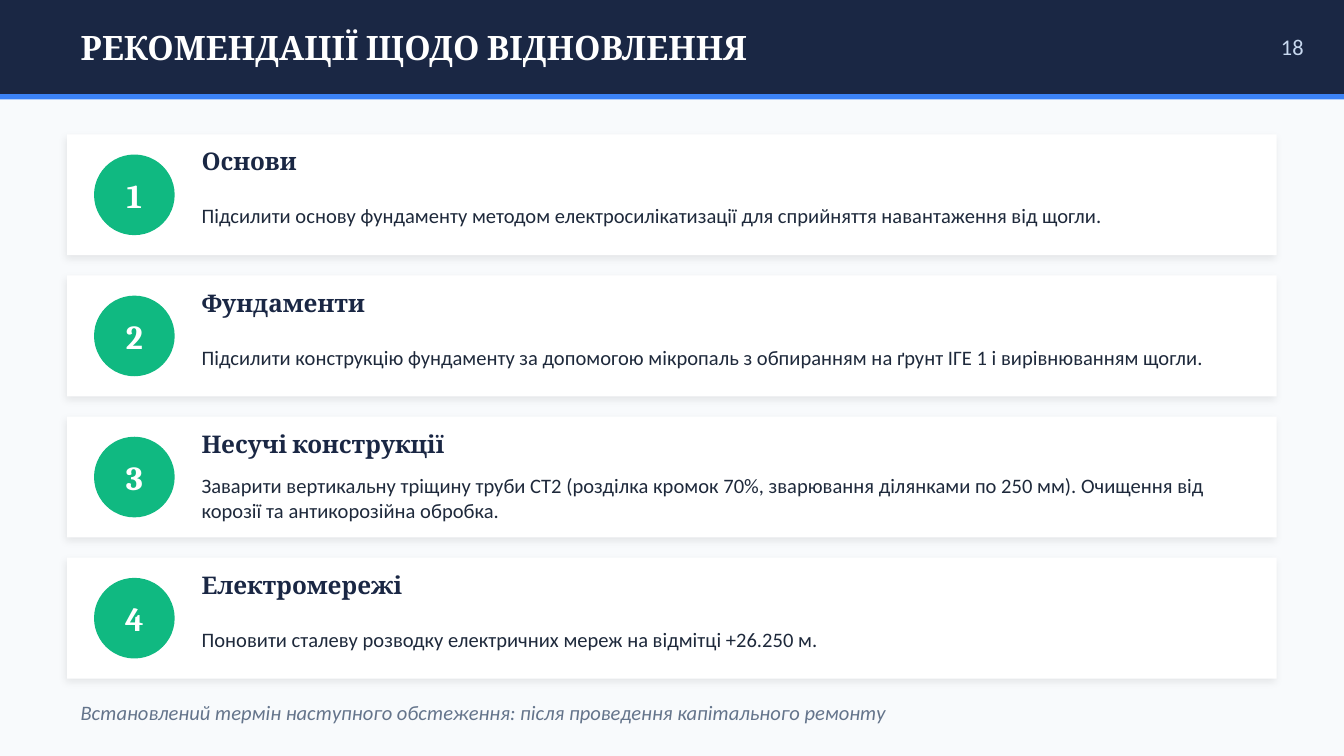
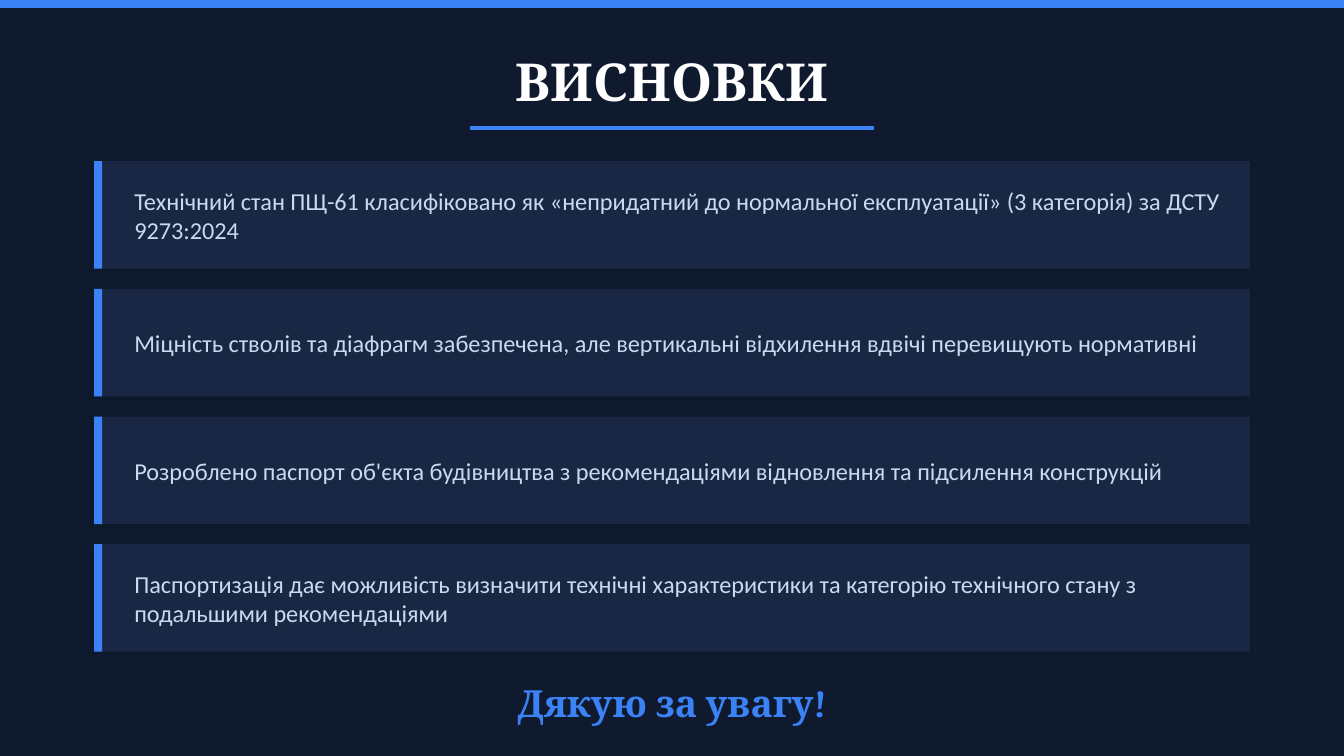
from lxml.etree import SubElement
from pptx import Presentation
from pptx.dml.color import RGBColor
from pptx.enum.shapes import MSO_CONNECTOR as Connector, MSO_SHAPE as Shape
from pptx.enum.text import MSO_ANCHOR as Anchor, PP_ALIGN as Align
from pptx.oxml.ns import qn
from pptx.util import Pt

# Palette and fonts
WHITE = RGBColor(0xFF, 0xFF, 0xFF)
PAPER = RGBColor(0xF8, 0xFA, 0xFC)
NIGHT = RGBColor(0x0F, 0x1A, 0x2E)
NAVY = RGBColor(0x1A, 0x27, 0x44)
BLUE = RGBColor(0x3B, 0x82, 0xF6)
GREEN = RGBColor(0x10, 0xB9, 0x81)
INK = RGBColor(0x1E, 0x29, 0x3B)
SLATE = RGBColor(0x64, 0x74, 0x8B)
ICE = RGBColor(0xC8, 0xD9, 0xF0)
SERIF = "Cambria"
SANS = "Calibri"

# Page and card spacing, in points
PAGE_WIDTH, PAGE_HEIGHT = 720, 405
CARD_GAP = 10.8

RECOMMENDATIONS = [
    ("Основи",
     "Підсилити основу фундаменту методом електросилікатизації для сприйняття "
     "навантаження від щогли."),
    ("Фундаменти",
     "Підсилити конструкцію фундаменту за допомогою мікропаль з обпиранням "
     "на ґрунт ІГЕ 1 і вирівнюванням щогли."),
    ("Несучі конструкції",
     "Заварити вертикальну тріщину труби СТ2 (розділка кромок 70%, зварювання "
     "ділянками по 250 мм). Очищення від корозії та антикорозійна обробка."),
    ("Електромережі",
     "Поновити сталеву розводку електричних мереж на відмітці +26.250 м."),
]

CONCLUSIONS = [
    "Технічний стан ПЩ-61 класифіковано як «непридатний до нормальної "
    "експлуатації» (3 категорія) за ДСТУ 9273:2024",
    "Міцність стволів та діафрагм забезпечена, але вертикальні відхилення "
    "вдвічі перевищують нормативні",
    "Розроблено паспорт об'єкта будівництва з рекомендаціями відновлення "
    "та підсилення конструкцій",
    "Паспортизація дає можливість визначити технічні характеристики та "
    "категорію технічного стану з подальшими рекомендаціями",
]


# Building blocks
def add_page(deck, background):
    page = deck.slides.add_slide(deck.slide_layouts[6])
    page.background.fill.solid()
    page.background.fill.fore_color.rgb = background
    return page


def write(shape, text, size, color, font=SANS, bold=False, italic=False,
          align=Align.LEFT):
    frame = shape.text_frame
    frame.word_wrap = True
    frame.vertical_anchor = Anchor.MIDDLE
    frame.margin_left = frame.margin_right = 0
    frame.margin_top = frame.margin_bottom = 0
    para = frame.paragraphs[0]
    para.text = text
    para.alignment = align
    para.font.name = font
    para.font.size = Pt(size)
    para.font.bold = bold
    para.font.italic = italic
    para.font.color.rgb = color


def add_text(page, left, top, width, height, text, size, color, **style):
    box = page.shapes.add_textbox(Pt(left), Pt(top), Pt(width), Pt(height))
    write(box, text, size, color, **style)


def add_block(page, left, top, width, height, fill, kind=Shape.RECTANGLE):
    block = page.shapes.add_shape(kind, Pt(left), Pt(top), Pt(width), Pt(height))
    block.shadow.inherit = False
    block.fill.solid()
    block.fill.fore_color.rgb = fill
    block.line.fill.background()
    return block


def add_card(page, left, top, width, height, fill):
    card = add_block(page, left, top, width, height, fill)
    effects = card._element.spPr.find(qn("a:effectLst"))
    shadow = SubElement(effects, qn("a:outerShdw"), blurRad=str(Pt(4)),
                        dist=str(Pt(2)), dir=str(135 * 60000),
                        algn="bl", rotWithShape="0")
    black = SubElement(shadow, qn("a:srgbClr"), val="000000")
    SubElement(black, qn("a:alpha"), val="8000")


def add_rule(page, left, right, y):
    rule = page.shapes.add_connector(Connector.STRAIGHT,
                                     Pt(left), Pt(y), Pt(right), Pt(y))
    rule.line.color.rgb = BLUE
    rule.line.width = Pt(2)
    SubElement(rule._element.spPr, qn("a:effectLst"))


def add_header(page, title, number):
    add_block(page, 0, 0, PAGE_WIDTH, 50.4, NAVY)
    add_text(page, 43.2, 7.2, 612, 36, title, 18, WHITE, font=SERIF, bold=True)
    add_text(page, 662.4, 7.2, 36, 36, number, 12, ICE, align=Align.RIGHT)
    add_block(page, 0, 50.4, PAGE_WIDTH, 2.88, BLUE)


def add_recommendation(page, top, number, heading, advice):
    add_card(page, 36, top, 648, 64.8, WHITE)
    badge = add_block(page, 50.4, top + 10.8, 43.2, 43.2, GREEN, Shape.OVAL)
    write(badge, str(number), 18, WHITE, font=SERIF, bold=True,
          align=Align.CENTER)
    add_text(page, 108, top + 3.6, 561.6, 21.6, heading, 13, NAVY,
             font=SERIF, bold=True)
    add_text(page, 108, top + 27.36, 561.6, 32.4, advice, 11, INK)


def add_conclusion(page, top, text):
    height = 57.6
    add_card(page, 50.4, top, 619.2, height, NAVY)
    add_block(page, 50.4, top, 4.32, height, BLUE)
    add_text(page, 72, top, 583.2, height, text, 13, ICE)


# Slides
def build_recommendations(deck):
    page = add_page(deck, PAPER)
    add_header(page, "РЕКОМЕНДАЦІЇ ЩОДО ВІДНОВЛЕННЯ", "18")
    for index, (heading, advice) in enumerate(RECOMMENDATIONS):
        top = 72 + index * (64.8 + CARD_GAP)
        add_recommendation(page, top, index + 1, heading, advice)
    add_text(page, 43.2, 370.8, 633.6, 21.6,
             "Встановлений термін наступного обстеження: "
             "після проведення капітального ремонту",
             11, SLATE, italic=True)


def build_conclusions(deck):
    page = add_page(deck, NIGHT)
    add_block(page, 0, 0, PAGE_WIDTH, 4.32, BLUE)
    add_text(page, 36, 21.6, 648, 43.2, "ВИСНОВКИ", 28, WHITE,
             font=SERIF, bold=True, align=Align.CENTER)
    add_rule(page, 252, 468, 68.4)
    for index, text in enumerate(CONCLUSIONS):
        add_conclusion(page, 86.4 + index * (57.6 + CARD_GAP), text)
    add_text(page, 36, 360, 648, 32.4, "Дякую за увагу!", 20, BLUE,
             font=SERIF, bold=True, align=Align.CENTER)


def main():
    deck = Presentation()
    deck.slide_width = Pt(PAGE_WIDTH)
    deck.slide_height = Pt(PAGE_HEIGHT)
    build_recommendations(deck)
    build_conclusions(deck)
    deck.save("out.pptx")


if __name__ == "__main__":
    main()
